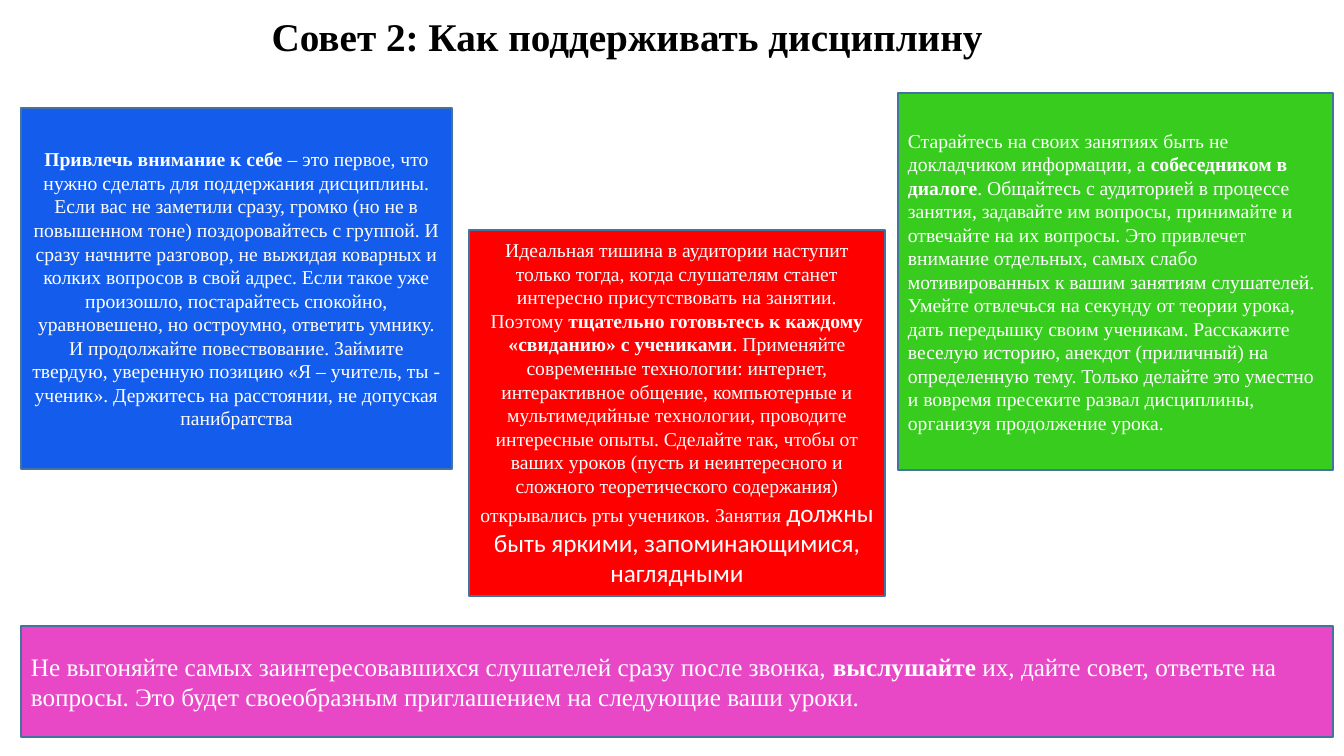
from pptx import Presentation
from pptx import util as u
from pptx.dml.color import RGBColor
from pptx.enum import shapes, text

PX = 914400 / 100.8
SERIF, SANS = "Times New Roman", "Calibri"
COLORS = {
    "black": "000000", "white": "FFFFFF", "border": "43739E",
    "blue": "145CEC", "red": "FF0000", "green": "37CC1E", "pink": "E848C6",
}
CENTER, LEFT = text.PP_ALIGN.CENTER, text.PP_ALIGN.LEFT

ATTENTION = [
    ("Привлечь внимание к себе ", True),
    ("– это первое, что нужно сделать для поддержания дисциплины. Если вас не "
     "заметили сразу, громко (но не в повышенном тоне) поздоровайтесь с группой. "
     "И сразу начните разговор, не выжидая коварных и колких вопросов в свой адрес. "
     "Если такое уже произошло, постарайтесь спокойно, уравновешено, но остроумно, "
     "ответить умнику. И продолжайте повествование. Займите твердую, уверенную "
     "позицию «Я – учитель, ты - ученик». Держитесь на расстоянии, не допуская "
     "панибратства", False),
]
PREPARATION = [
    ("Идеальная тишина в аудитории наступит только тогда, когда слушателям станет "
     "интересно присутствовать на занятии. Поэтому ", False),
    ("тщательно готовьтесь к каждому «свиданию» с учениками", True),
    (". Применяйте современные технологии: интернет, интерактивное общение, "
     "компьютерные и мультимедийные технологии, проводите интересные опыты. "
     "Сделайте так, чтобы от ваших уроков (пусть и неинтересного и сложного "
     "теоретического содержания) открывались рты учеников. Занятия ", False),
    ("должны быть яркими, запоминающимися, наглядными", False, 18, SANS),
]
DIALOGUE = [
    ("Старайтесь на своих занятиях быть не докладчиком информации, а ", False),
    ("собеседником в диалоге", True),
    (". Общайтесь с аудиторией в процессе занятия, задавайте им вопросы, принимайте "
     "и отвечайте на их вопросы. Это привлечет внимание отдельных, самых слабо "
     "мотивированных к вашим занятиям слушателей. Умейте отвлечься на секунду от "
     "теории урока, дать передышку своим ученикам. Расскажите веселую историю, "
     "анекдот (приличный) на определенную тему. Только делайте это уместно и "
     "вовремя пресеките развал дисциплины, организуя продолжение урока.", False),
]
AFTER_CLASS = [
    ("Не выгоняйте самых заинтересовавшихся слушателей сразу после звонка, ", False),
    ("выслушайте", True),
    (" их, дайте совет, ответьте на вопросы. Это будет своеобразным приглашением "
     "на следующие ваши уроки.", False),
]


def px(*lengths):
    """Turn pixel lengths into EMU."""
    return [u.Emu(round(n * PX)) for n in lengths]


def rgb(name):
    """Look up a colour by name."""
    return RGBColor.from_string(COLORS[name])


def style(r, size, color, bold=False, font=SERIF):
    """Format one run."""
    r.font.name = font
    r.font.size = u.Pt(size)
    r.font.bold = bold
    r.font.color.rgb = rgb(color)


def add_title(s, title, box):
    """Place and format the title placeholder."""
    sp = s.shapes.title
    sp.left, sp.top, sp.width, sp.height = px(*box)
    tf = sp.text_frame
    tf.text = title
    tf.auto_size = text.MSO_AUTO_SIZE.SHAPE_TO_FIT_TEXT
    p = tf.paragraphs[0]
    p.alignment = CENTER
    style(p.runs[0], 28, "black", True)


def add_card(s, box, fill, runs, size=14, align=LEFT):
    """Add a filled rectangle holding one paragraph of mixed runs."""
    sp = s.shapes.add_shape(shapes.MSO_SHAPE.RECTANGLE, *px(*box))
    sp.shadow.inherit = False
    sp.fill.solid()
    sp.fill.fore_color.rgb = rgb(fill)
    sp.line.color.rgb = rgb("border")
    sp.line.width = u.Pt(1)
    tf = sp.text_frame
    tf.word_wrap = True
    tf.vertical_anchor = text.MSO_ANCHOR.MIDDLE
    p = tf.paragraphs[0]
    p.alignment = align
    for words, bold, *special in runs:
        r = p.add_run()
        r.text = words
        run_size, font = special or (size, SERIF)
        style(r, run_size, "white", bold, font)


def main():
    """Build the slide and save it."""
    prs = Presentation()
    prs.slide_width, prs.slide_height = px(1344, 756)
    s = prs.slides.add_slide(prs.slide_layouts[5])
    add_title(s, "Совет 2: Как поддерживать дисциплину", (138, 7, 978, 57))
    add_card(s, (21, 108, 431, 361), "blue", ATTENTION, align=CENTER)
    add_card(s, (469, 230, 416, 366), "red", PREPARATION, align=CENTER)
    add_card(s, (898, 93, 435, 377), "green", DIALOGUE)
    add_card(s, (21, 626, 1312, 111), "pink", AFTER_CLASS, size=18)
    prs.save("out.pptx")


if __name__ == "__main__":
    main()
